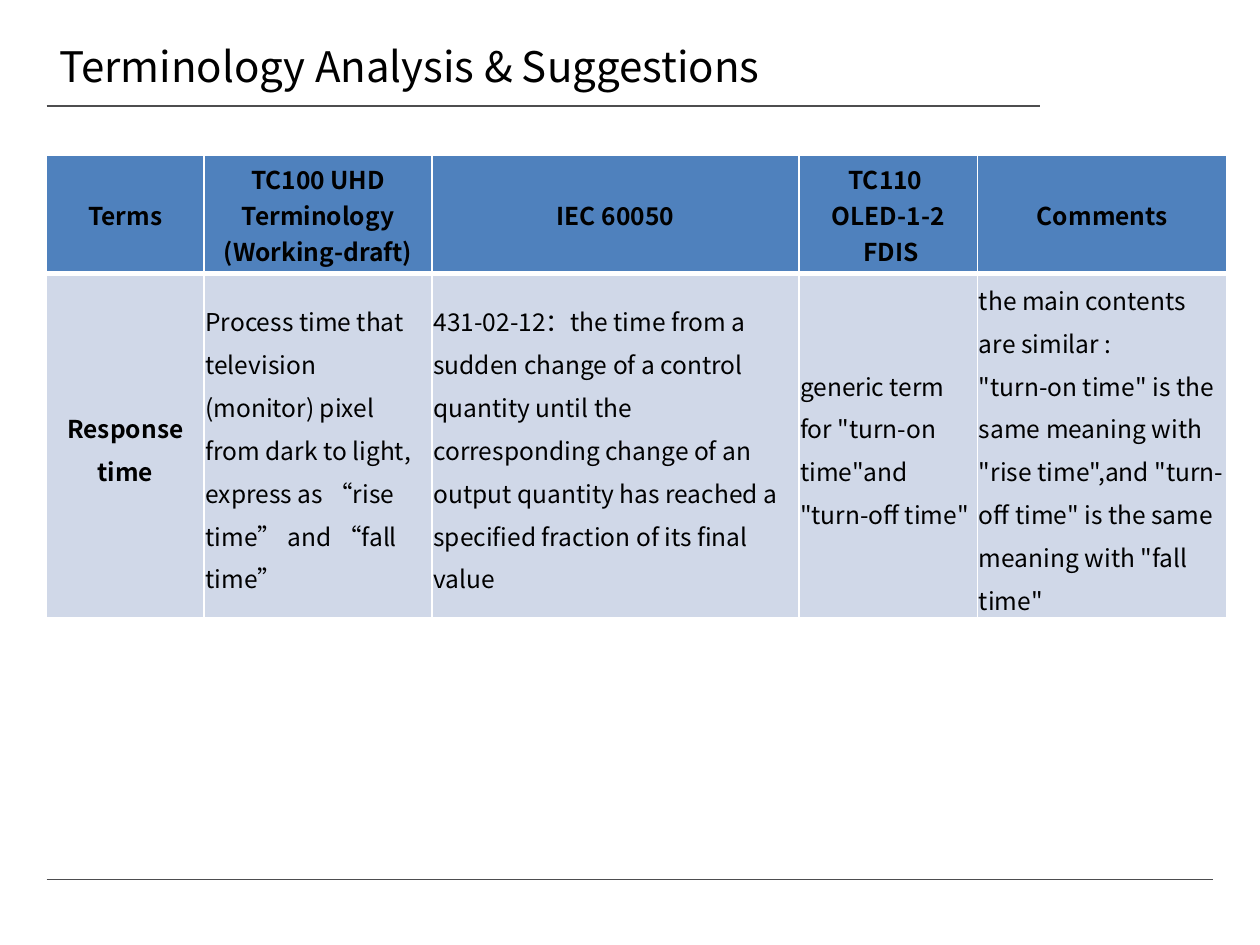
from pptx import Presentation
from pptx.dml.color import RGBColor
from pptx.enum.shapes import MSO_CONNECTOR
from pptx.enum.text import MSO_ANCHOR, PP_ALIGN
from pptx.oxml.ns import qn
from pptx.util import Inches, Pt
from lxml.etree import SubElement

# Content: each cell is a list of paragraphs, "\n" is a line break
TITLE = "Terminology Analysis & Suggestions"
HEADER = [
    ["Terms"],
    ["TC100 UHD Terminology\n(Working-draft)"],
    ["IEC 60050"],
    ["TC110 ", "OLED-1-2", " FDIS"],
    ["Comments"],
]
RESPONSE_TIME = [
    ["Response", "time"],
    ["Process time that television (monitor) pixel from dark to light, "
     "express as “rise time” and “fall time”"],
    ["431-02-12：the time from a sudden change of a control quantity until "
     "the corresponding change of an output quantity has reached a "
     "specified fraction of its final value"],
    ['generic term for "turn-on time"and "turn-off time"'],
    ['the main contents are similar :\n"turn-on time" is the same meaning '
     'with "rise time",and "turn-off time" is the same meaning with '
     '"fall time"'],
]
ROWS = [HEADER, RESPONSE_TIME]

# Style and layout, in inches
FONT = "Noto Sans CJK SC"
COLORS = {"text": "000000", "rule": "4D4D4F", "header": "4F81BD",
          "body": "D0D8E8", "border": "FFFFFF"}
WIDTH, HEIGHT = 10, 7.5
MARGIN = 0.37
RULES = [(0.84, 8.25), (6.98, WIDTH - MARGIN)]  # height, right end
TABLE_TOP = 1.23
COLUMN_WIDTHS = [1.25, 1.81, 2.91, 1.42, 1.98]
ROW_HEIGHTS = [0.94, 2.73]  # the body row holds eight lines


def color(name):
    return RGBColor.from_string(COLORS[name])


def add_span(para, text, size, bold=False):
    for number, line in enumerate(text.split("\n")):
        if number:
            para.add_line_break()
        span = para.add_run()
        span.text = line
        span.font.size = Pt(size)
        span.font.bold = bold
        span.font.name = FONT
        span.font.color.rgb = color("text")
        SubElement(span.font._element, qn("a:ea"), typeface=FONT)


def add_rule(page, top, right):
    rule = page.shapes.add_connector(
        MSO_CONNECTOR.STRAIGHT, Inches(MARGIN), Inches(top),
        Inches(right), Inches(top))
    rule.line.color.rgb = color("rule")
    rule.line.width = Pt(1)
    SubElement(rule._element.spPr, qn("a:effectLst"))


def add_borders(cell, widths):
    properties = cell._tc.get_or_add_tcPr()
    for position, (side, width) in enumerate(widths.items()):
        line = properties.makeelement(qn(f"a:ln{side}"), {"w": str(Pt(width))})
        fill = SubElement(line, qn("a:solidFill"))
        SubElement(fill, qn("a:srgbClr"), val=COLORS["border"])
        properties.insert(position, line)


def fill_cell(cell, paragraphs, is_header, is_label):
    cell.vertical_anchor = MSO_ANCHOR.MIDDLE
    cell.margin_left = cell.margin_right = cell.margin_top = Inches(0.01)
    cell.margin_bottom = 0
    cell.fill.solid()
    cell.fill.fore_color.rgb = color("header" if is_header else "body")
    add_borders(cell, {"L": 1, "R": 1, "T": 1 if is_header else 3,
                       "B": 3 if is_header else 1})
    strong = is_header or is_label
    for number, text in enumerate(paragraphs):
        frame = cell.text_frame
        para = frame.add_paragraph() if number else frame.paragraphs[0]
        para.alignment = PP_ALIGN.CENTER if strong else PP_ALIGN.LEFT
        para.line_spacing = 1.0 if is_header else 1.2
        add_span(para, text, 14, strong)


def main():
    deck = Presentation()
    deck.slide_width, deck.slide_height = Inches(WIDTH), Inches(HEIGHT)
    page = deck.slides.add_slide(deck.slide_layouts[6])

    # Rules above and below the content
    for top, right in RULES:
        add_rule(page, top, right)

    # Title
    box = page.shapes.add_textbox(Inches(MARGIN), Inches(0.21),
                                  Inches(6.68), Inches(0.63))
    box.text_frame.word_wrap = True
    box.text_frame.vertical_anchor = MSO_ANCHOR.MIDDLE
    add_span(box.text_frame.paragraphs[0], TITLE, 24)

    # Terminology table
    table = page.shapes.add_table(
        len(ROWS), len(HEADER), Inches(MARGIN), Inches(TABLE_TOP),
        Inches(sum(COLUMN_WIDTHS)), Inches(sum(ROW_HEIGHTS))).table
    for column, width in zip(table.columns, COLUMN_WIDTHS):
        column.width = Inches(width)
    for row, height in zip(table.rows, ROW_HEIGHTS):
        row.height = Inches(height)
    for r, row in enumerate(ROWS):
        for c, paragraphs in enumerate(row):
            fill_cell(table.cell(r, c), paragraphs, r == 0, c == 0)

    deck.save("out.pptx")


if __name__ == "__main__":
    main()
